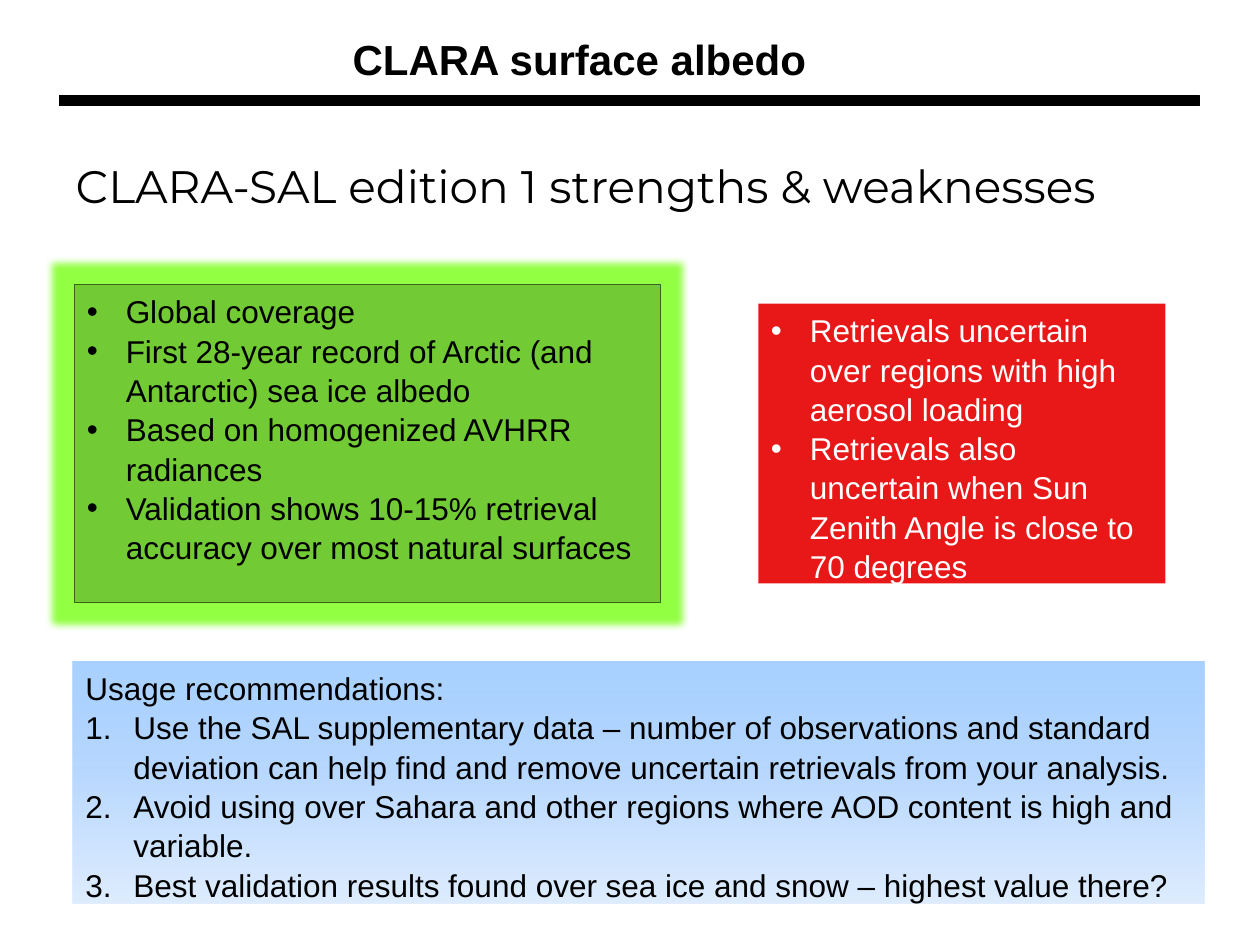
"""Build the CLARA surface albedo strengths and weaknesses slide."""
from dataclasses import dataclass
from typing import Optional

from lxml import etree
from pptx import Presentation
from pptx import util as u
from pptx.dml.color import RGBColor
from pptx.enum import shapes, text
from pptx.oxml import parse_xml
from pptx.oxml.ns import nsdecls, qn


@dataclass(frozen=True)
class Theme:
    black: str = "000000"
    white: str = "FFFFFF"
    green: str = "72CA34"
    green_edge: str = "39651A"
    green_glow: str = "92FF43"
    red: str = "E81818"
    blues: tuple = ((0, "90C4FF", 77), (50, "BBD9FE", 100), (100, "DEECFE", 100))
    body_font: str = "Arial"
    title_font: str = "Montserrat"
    header_size: int = 24
    title_size: int = 26
    body_size: int = 18
    body_spacing: float = 1.04


@dataclass(frozen=True)
class Area:
    left: float
    top: float
    width: float
    height: float

    def lengths(self) -> tuple:
        return tuple(u.Inches(n) for n in (self.left, self.top, self.width, self.height))


@dataclass(frozen=True)
class Panel:
    area: Area
    items: tuple
    ink: str
    fill: Optional[str] = None
    edge: Optional[str] = None
    glow: Optional[str] = None
    heading: Optional[str] = None
    numbered: bool = False
    indent: float = 0.31


THEME = Theme()
PANELS = (
    Panel(Area(0.59, 2.26, 4.65, 2.52), (
        "Global coverage",
        "First 28-year record of Arctic (and Antarctic) sea ice albedo",
        "Based on homogenized AVHRR radiances",
        "Validation shows 10-15% retrieval accuracy over most natural surfaces",
    ), THEME.black, THEME.green, THEME.green_edge, THEME.green_glow),
    Panel(Area(6.02, 2.41, 3.23, 2.22), (
        "Retrievals uncertain over regions with high aerosol loading",
        "Retrievals also uncertain when Sun Zenith Angle is close to 70 degrees",
    ), THEME.white, THEME.red),
    Panel(Area(0.58, 5.25, 8.98, 1.92), (
        "Use the SAL supplementary data – number of observations and standard "
        "deviation can help find and remove uncertain retrievals from your analysis.",
        "Avoid using over Sahara and other regions where AOD content is high and variable.",
        "Best validation results found over sea ice and snow – highest value there?",
    ), THEME.black, heading="Usage recommendations:", numbered=True, indent=0.38),
)


def add_span(para, words: str, font: str, size: int, ink: str, bold: bool = False) -> None:
    """Add one formatted run to a paragraph."""
    span = para.add_run()
    span.text = words
    span.font.name = font
    span.font.size = u.Pt(size)
    span.font.bold = bold
    span.font.color.rgb = RGBColor.from_string(ink)


def add_marker(para, numbered: bool, indent: float) -> None:
    """Give a paragraph a hanging bullet or automatic number."""
    props = para._p.get_or_add_pPr()
    props.set("marL", str(u.Inches(indent)))
    props.set("indent", str(-u.Inches(indent)))
    etree.SubElement(props, qn("a:buFont"), typeface=THEME.body_font)
    if numbered:
        etree.SubElement(props, qn("a:buAutoNum"), type="arabicPeriod")
    else:
        etree.SubElement(props, qn("a:buChar"), char="•")


def fill_gradient(box) -> None:
    """Fill a shape with the vertical blue gradient."""
    stops = "".join(
        f'<a:gs pos="{place * 1000}"><a:srgbClr val="{color}">'
        f'<a:alpha val="{alpha * 1000}"/></a:srgbClr></a:gs>'
        for place, color, alpha in THEME.blues)
    box._element.spPr.find(qn("a:prstGeom")).addnext(parse_xml(
        f'<a:gradFill {nsdecls("a")} rotWithShape="1"><a:gsLst>{stops}</a:gsLst>'
        '<a:lin ang="5400000" scaled="0"/></a:gradFill>'))


def add_glow(box, color: str) -> None:
    """Surround a shape with a soft glow."""
    effects = box._element.spPr.find(qn("a:effectLst"))
    glow = etree.SubElement(effects, qn("a:glow"), rad=str(u.Pt(8)))
    etree.SubElement(glow, qn("a:srgbClr"), val=color)


def add_rectangle(page, area: Area, fill: Optional[str], edge: Optional[str]):
    """Draw a rectangle without a shadow."""
    box = page.shapes.add_shape(shapes.MSO_SHAPE.RECTANGLE, *area.lengths())
    box.shadow.inherit = False
    if fill:
        box.fill.solid()
        box.fill.fore_color.rgb = RGBColor.from_string(fill)
    else:
        fill_gradient(box)
    if edge:
        box.line.color.rgb = RGBColor.from_string(edge)
        box.line.width = u.Pt(0.75)
    else:
        box.line.fill.background()
    return box


def add_panel(page, panel: Panel) -> None:
    """Draw a coloured panel with its list."""
    box = add_rectangle(page, panel.area, panel.fill, panel.edge)
    if panel.glow:
        add_glow(box, panel.glow)
    frame = box.text_frame
    frame.word_wrap = True
    frame.vertical_anchor = text.MSO_ANCHOR.TOP
    lines = ((panel.heading,) if panel.heading else ()) + panel.items
    for index, words in enumerate(lines):
        para = frame.add_paragraph() if index else frame.paragraphs[0]
        if words != panel.heading:
            add_marker(para, panel.numbered, panel.indent)
        para.alignment = text.PP_ALIGN.LEFT
        para.line_spacing = THEME.body_spacing
        add_span(para, words, THEME.body_font, THEME.body_size, panel.ink)


def add_header(page) -> None:
    """Draw the product name above its rule."""
    add_rectangle(page, Area(0.47, 0.76, 9.05, 0.08), THEME.black, THEME.black)
    box = page.shapes.add_textbox(*Area(2.7, 0.22, 5.38, 0.5).lengths())
    box.text_frame.word_wrap = True
    add_span(box.text_frame.paragraphs[0], "CLARA surface albedo",
             THEME.body_font, THEME.header_size, THEME.black, bold=True)


def add_title(page) -> None:
    """Place and fill the title placeholder."""
    title = page.shapes.title
    title.left, title.top, title.width, title.height = Area(0.5, 1.16, 9.5, 0.62).lengths()
    title.text_frame.vertical_anchor = text.MSO_ANCHOR.MIDDLE
    para = title.text_frame.paragraphs[0]
    para.alignment = text.PP_ALIGN.LEFT
    add_span(para, "CLARA-SAL edition 1 strengths & weaknesses",
             THEME.title_font, THEME.title_size, THEME.black)


def main() -> None:
    """Assemble and save the deck."""
    deck = Presentation()
    deck.slide_width, deck.slide_height = u.Inches(10), u.Inches(7.5)
    page = deck.slides.add_slide(deck.slide_layouts.get_by_name("Title Only"))
    add_header(page)
    add_title(page)
    for panel in PANELS:
        add_panel(page, panel)
    deck.save("out.pptx")


if __name__ == "__main__":
    main()
